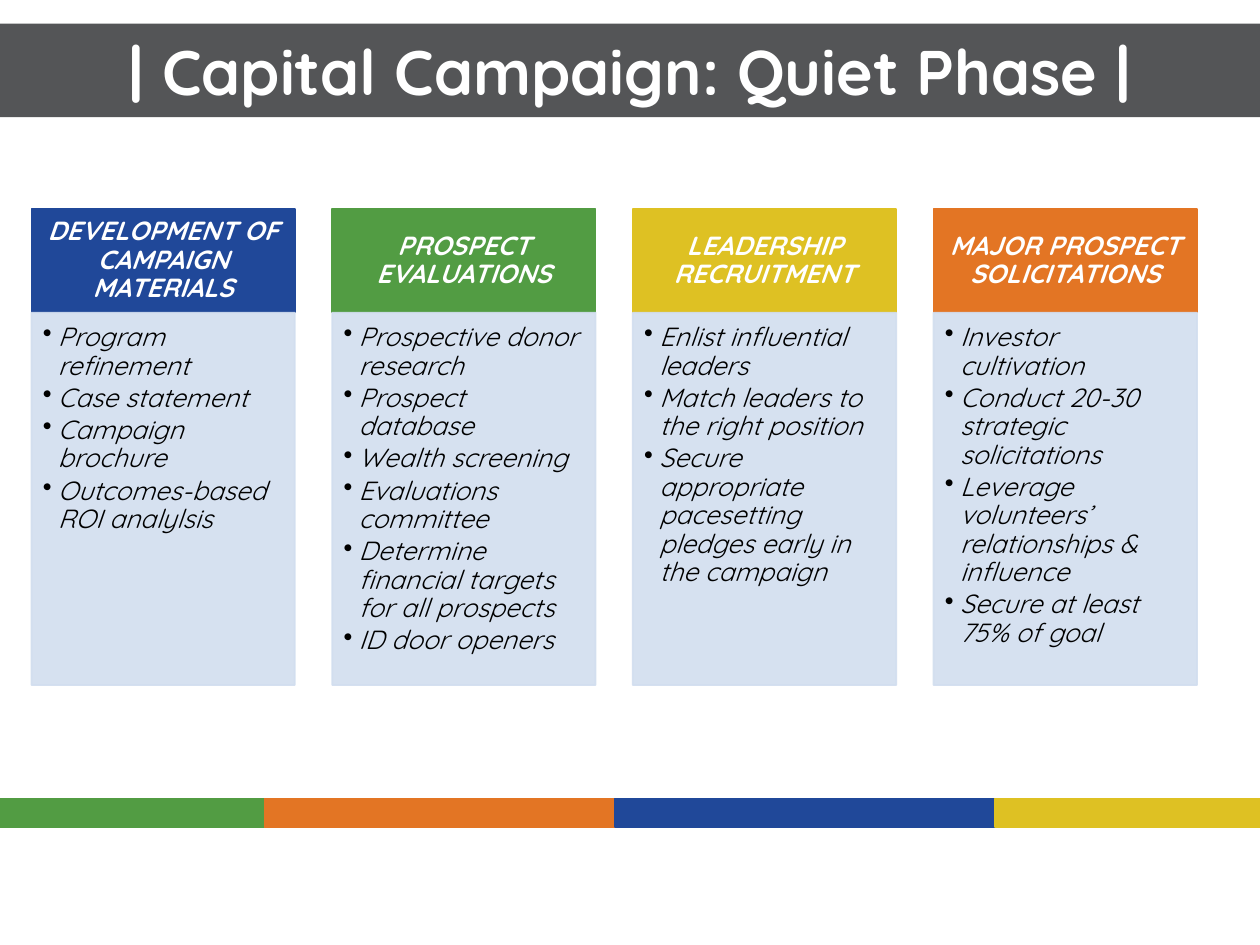
from lxml import etree
from pptx import Presentation, util as u
from pptx.dml.color import RGBColor
from pptx.enum import shapes, text
from pptx.oxml.ns import qn

WIDE, HIGH = u.Inches(10), u.Inches(7.5)
FACE = "Quicksand"
HUES = {
    "bar": "545557", "blue": "204899", "green": "529C43", "gold": "DEC123",
    "orange": "E37524", "pale": "D2DEEF", "white": "FFFFFF", "black": "000000",
}
PHASES = [
    ("blue", "DEVELOPMENT OF CAMPAIGN MATERIALS", [
        "Program refinement", "Case statement", "Campaign brochure",
        "Outcomes-based ROI analylsis"]),
    ("green", "PROSPECT EVALUATIONS", [
        "Prospective donor research", "Prospect database", "Wealth screening",
        "Evaluations committee", "Determine financial targets for all prospects",
        "ID door openers"]),
    ("gold", "LEADERSHIP RECRUITMENT", [
        "Enlist influential leaders", "Match leaders to the right position",
        "Secure appropriate pacesetting pledges early in the campaign"]),
    ("orange", "MAJOR PROSPECT SOLICITATIONS", [
        "Investor cultivation", "Conduct 20-30 strategic solicitations",
        "Leverage volunteers’ relationships & influence",
        "Secure at least 75% of goal"]),
]
STRIPES = [("green", 0.21), ("orange", 0.278), ("blue", 0.302), ("gold", 0.21)]


def add_rect(slide, box, hue, line=True, alpha=None):
    """Draw a flat rectangle in a box of left, top, width and height."""
    rect = slide.shapes.add_shape(
        shapes.MSO_SHAPE.RECTANGLE, *(round(part) for part in box))
    rect.shadow.inherit = False
    fills = [rect.fill]
    if line:
        rect.line.width = u.Pt(1)
        fills.append(rect.line.fill)
    else:
        rect.line.fill.background()
    for fill in fills:
        fill.solid()
        fill.fore_color.rgb = RGBColor.from_string(HUES[hue])
    if alpha:
        for tint in rect._element.spPr.iter(qn("a:srgbClr")):
            etree.SubElement(tint, qn("a:alpha"), val=str(alpha * 1000))
    return rect


def add_text(rect, lines, size, hue, bold=False, slant=False, pads=None,
             space=None, after=0, bullet=False):
    """Write paragraphs of one style into a rectangle."""
    frame = rect.text_frame
    frame.word_wrap = True
    anchor = text.MSO_ANCHOR
    frame.vertical_anchor = anchor.TOP if bullet else anchor.MIDDLE
    if pads:
        (frame.margin_left, frame.margin_top, frame.margin_right,
         frame.margin_bottom) = (u.Inches(pad) for pad in pads)
    for index, line in enumerate(lines):
        para = frame.paragraphs[0] if index == 0 else frame.add_paragraph()
        para.text = line
        para.alignment = text.PP_ALIGN.LEFT if bullet else text.PP_ALIGN.CENTER
        para.line_spacing = space
        para.space_after = u.Pt(after)
        if bullet:
            para.level = 1
            props = para._p.get_or_add_pPr()
            props.set("marL", str(u.Inches(0.12)))
            props.set("indent", str(-u.Inches(0.12)))
            etree.SubElement(props, qn("a:buChar"), char="•")
        font = para.font
        font.name, font.size = FACE, u.Pt(size)
        font.bold, font.italic = bold, slant
        font.color.rgb = RGBColor.from_string(HUES[hue])


def add_title(slide, box):
    """Place the title bar."""
    bar = add_rect(slide, box, "bar", line=False)
    add_text(bar, ["| Capital Campaign: Quiet Phase |"], 36, "white", bold=True)


def add_phase(slide, box, hue, name, steps):
    """Place one phase, a heading over its list of steps."""
    left, top, wide, high = box
    split = high * 0.218
    head = add_rect(slide, (left, top, wide, split), hue)
    add_text(head, [name], 15, "white", bold=True, slant=True,
             pads=(0.12, 0.07, 0.12, 0.07), space=0.9)
    body = add_rect(slide, (left, top + split, wide, high - split), "pale", alpha=90)
    add_text(body, steps, 15, "black", slant=True, bullet=True,
             pads=(0.09, 0.09, 0.12, 0.13), space=0.9, after=2.25)


def add_phases(slide, box):
    """Set the phases side by side with equal gaps."""
    left, top, wide, high = box
    col = wide * 0.226
    step = (wide - col) / (len(PHASES) - 1)
    for index, phase in enumerate(PHASES):
        add_phase(slide, (left + index * step, top, col, high), *phase)


def add_stripes(slide, box):
    """Fill a band with coloured stripes, end to end."""
    left, top, wide, high = box
    for hue, share in STRIPES:
        add_rect(slide, (left, top, wide * share, high), hue)
        left += wide * share


def main():
    """Build and save the slide."""
    deck = Presentation()
    deck.slide_width, deck.slide_height = WIDE, HIGH
    slide = deck.slides.add_slide(deck.slide_layouts[6])
    add_title(slide, (0, HIGH * 0.025, WIDE, HIGH * 0.099))
    add_phases(slide, (WIDE * 0.025, HIGH * 0.221, WIDE * 0.925, HIGH * 0.504))
    add_stripes(slide, (0, HIGH * 0.845, WIDE, HIGH * 0.03))
    deck.save("out.pptx")


if __name__ == "__main__":
    main()
